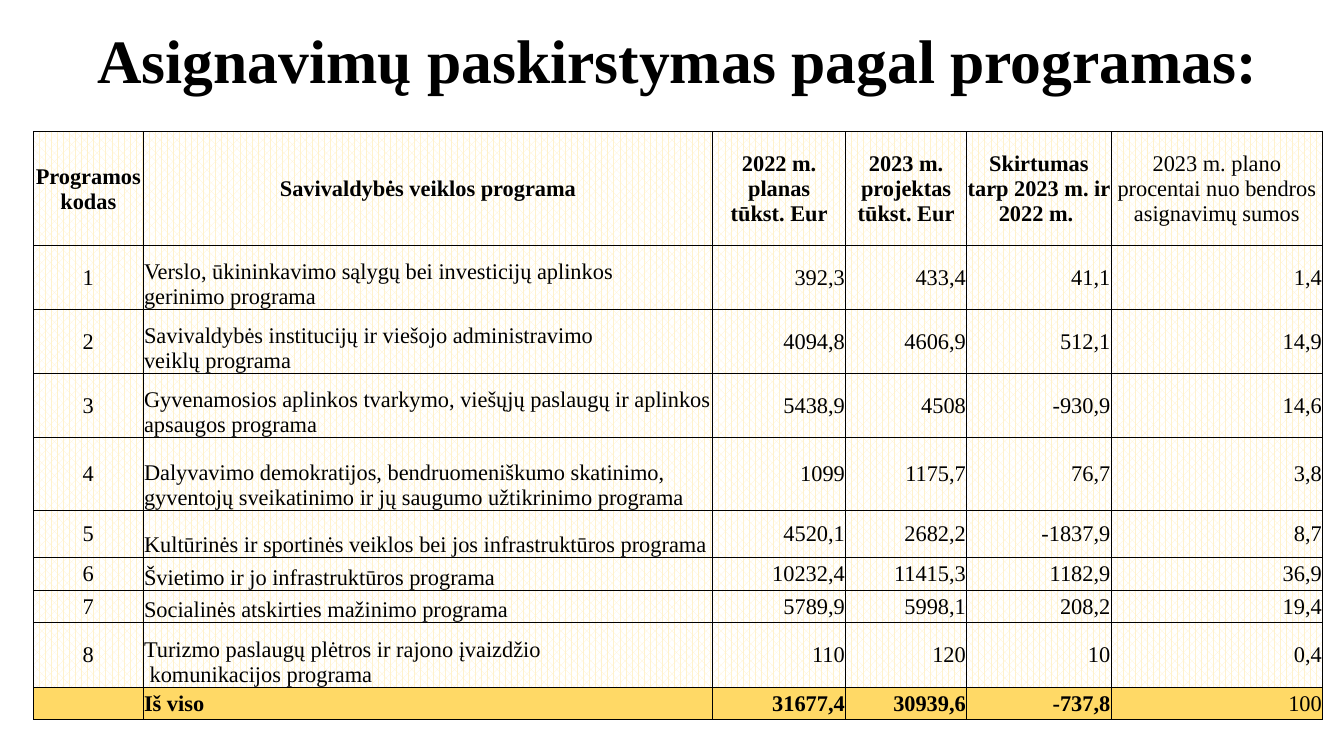
from lxml.etree import SubElement
from pptx import Presentation
from pptx.dml.color import RGBColor
from pptx.enum.dml import MSO_PATTERN
from pptx.enum.text import MSO_ANCHOR as Anchor, MSO_AUTO_SIZE as AutoSize, PP_ALIGN as Align
from pptx.oxml.ns import qn
from pptx.util import Cm, Pt

COLORS = {"text": "000000", "border": "000000", "dots": "FFF2CC",
          "paper": "FFFFFF", "total": "FFD966"}
FONT = "Times New Roman"

COLUMN_WIDTHS = [2.77, 14.35, 3.35, 3.05, 3.64, 5.33]
ROW_HEIGHTS = [2.87, 1.61, 1.61, 1.61, 1.84, 1.19, 0.82, 0.82, 1.62, 0.82]
HEADERS = ["Programos\nkodas", "Savivaldybės veiklos programa",
           "2022 m. planas\ntūkst. Eur", "2023 m. projektas\ntūkst. Eur",
           "Skirtumas tarp 2023 m. ir 2022 m. ",
           "2023 m. plano procentai nuo bendros asignavimų sumos"]
PROGRAMS = [
    ["1", "Verslo, ūkininkavimo sąlygų bei investicijų aplinkos \ngerinimo programa",
     "392,3", "433,4", "41,1", "1,4"],
    ["2", "Savivaldybės institucijų ir viešojo administravimo \nveiklų programa",
     "4094,8", "4606,9", "512,1", "14,9"],
    ["3", "Gyvenamosios aplinkos tvarkymo, viešųjų paslaugų ir aplinkos apsaugos programa",
     "5438,9", "4508", "-930,9", "14,6"],
    ["4", "Dalyvavimo demokratijos, bendruomeniškumo skatinimo, "
     "gyventojų sveikatinimo ir jų saugumo užtikrinimo programa",
     "1099", "1175,7", "76,7", "3,8"],
    ["5", "Kultūrinės ir sportinės veiklos bei jos infrastruktūros programa",
     "4520,1", "2682,2", "-1837,9", "8,7"],
    ["6", "Švietimo ir jo infrastruktūros programa",
     "10232,4", "11415,3", "1182,9", "36,9"],
    ["7", "Socialinės atskirties mažinimo programa",
     "5789,9", "5998,1", "208,2", "19,4"],
    ["8", "Turizmo paslaugų plėtros ir rajono įvaizdžio\n komunikacijos programa",
     "110", "120", "10", "0,4"],
]
TOTAL = ["", "Iš viso", "31677,4", "30939,6", "-737,8", "100"]


def color(name):
    return RGBColor.from_string(COLORS[name])


def write(frame, text, size=16, bold=False, align=Align.LEFT, spacing=None):
    para = frame.paragraphs[0]
    para.text = text
    para.alignment = align
    para.line_spacing = spacing
    for span in para.runs:
        span.font.name = FONT
        span.font.size = Pt(size)
        span.font.bold = bold
        span.font.color.rgb = color("text")


class SlideBuilder:
    def __init__(self, deck):
        self.page = deck.slides.add_slide(deck.slide_layouts[0])
        subtitle = self.page.placeholders[1].element
        subtitle.getparent().remove(subtitle)

    def title(self, text, left, top, width, height):
        box = self.page.shapes.title
        box.left, box.top, box.width, box.height = Cm(left), Cm(top), Cm(width), Cm(height)
        frame = box.text_frame
        frame.auto_size = AutoSize.NONE
        frame.word_wrap = True
        frame.vertical_anchor = Anchor.BOTTOM
        write(frame, text, size=44, bold=True, align=Align.CENTER, spacing=0.9)

    def table(self, rows, left, top):
        table = self.page.shapes.add_table(
            len(rows), len(COLUMN_WIDTHS), Cm(left), Cm(top),
            Cm(sum(COLUMN_WIDTHS)), Cm(sum(ROW_HEIGHTS))).table
        for column, width in zip(table.columns, COLUMN_WIDTHS):
            column.width = Cm(width)
        for row, height in zip(table.rows, ROW_HEIGHTS):
            row.height = Cm(height)
        last_row, last_column = len(rows) - 1, len(COLUMN_WIDTHS) - 1
        for r, texts in enumerate(rows):
            for c, text in enumerate(texts):
                cell = table.cell(r, c)
                # Header and codes are centred, names left, figures right
                if r == 0 or c == 0:
                    align = Align.CENTER
                else:
                    align = Align.LEFT if c == 1 else Align.RIGHT
                is_name = c == 1 and 0 < r < last_row
                cell.vertical_anchor = Anchor.BOTTOM if is_name else Anchor.MIDDLE
                cell.margin_left = cell.margin_right = cell.margin_top = Cm(0.02)
                cell.margin_bottom = 0
                write(cell.text_frame, text, align=align,
                      bold=r in (0, last_row) and c != last_column)
                self.border(cell)
                self.fill(cell, is_total=r == last_row)

    def border(self, cell):
        properties = cell._tc.get_or_add_tcPr()
        for side in ("a:lnL", "a:lnR", "a:lnT", "a:lnB"):
            line = SubElement(properties, qn(side), w=str(Pt(0.5)))
            solid = SubElement(line, qn("a:solidFill"))
            SubElement(solid, qn("a:srgbClr"), val=COLORS["border"])

    def fill(self, cell, is_total):
        if is_total:
            cell.fill.solid()
            cell.fill.fore_color.rgb = color("total")
        else:
            cell.fill.patterned()
            cell.fill.pattern = MSO_PATTERN.PERCENT_60
            cell.fill.fore_color.rgb = color("dots")
            cell.fill.back_color.rgb = color("paper")


def main():
    deck = Presentation()
    deck.slide_width, deck.slide_height = Cm(33.87), Cm(19.05)
    builder = SlideBuilder(deck)

    # Heading
    builder.title("Asignavimų paskirstymas pagal programas:", 0.84, 0.66, 32.49, 1.9)

    # Allocations by programme
    builder.table([HEADERS, *PROGRAMS, TOTAL], 0.84, 3.32)

    deck.save("out.pptx")


if __name__ == "__main__":
    main()
